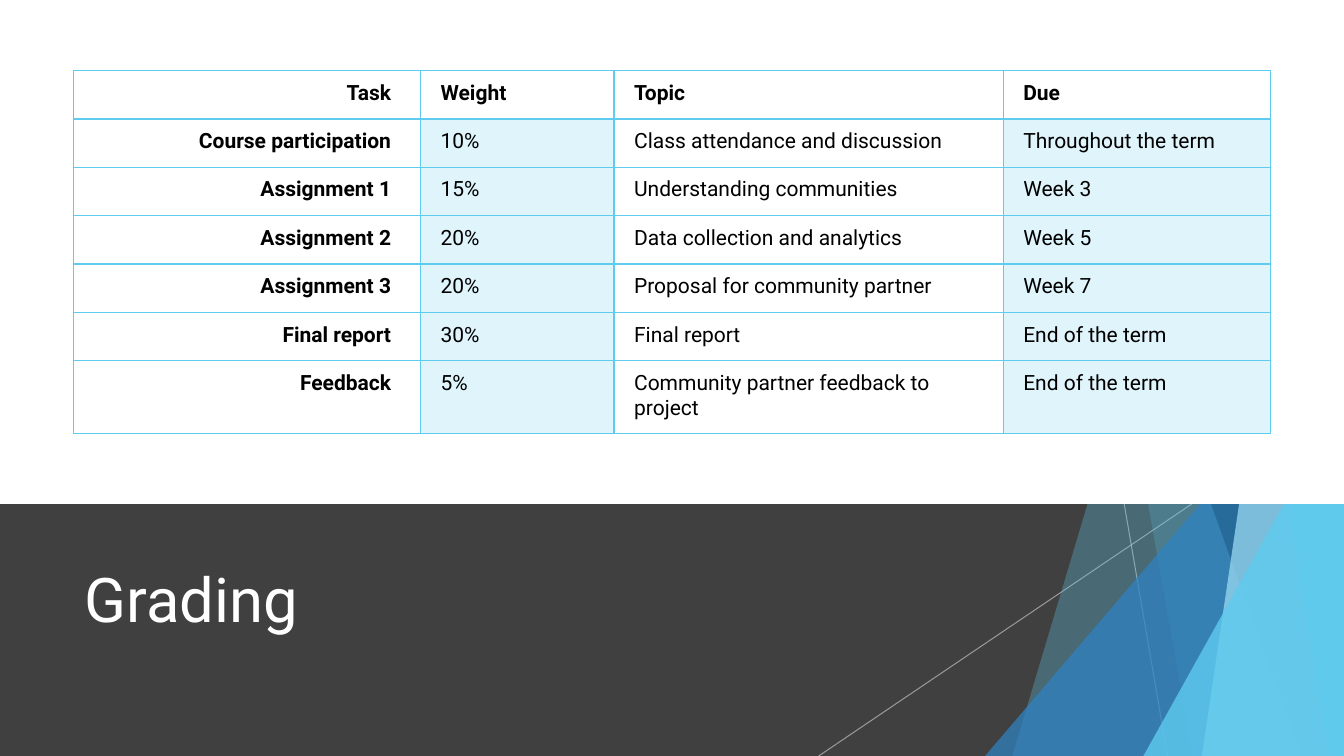
from dataclasses import dataclass

from lxml import etree
from pptx import Presentation
from pptx.dml.color import RGBColor
from pptx.enum.shapes import MSO_CONNECTOR, MSO_SHAPE
from pptx.enum.text import MSO_ANCHOR, PP_ALIGN
from pptx.oxml.ns import qn
from pptx.util import Inches, Pt

RECT = MSO_SHAPE.RECTANGLE
WEDGE = MSO_SHAPE.ISOSCELES_TRIANGLE
LINE = MSO_CONNECTOR.STRAIGHT
MIDDLE = MSO_ANCHOR.MIDDLE
LEFT, RIGHT = PP_ALIGN.LEFT, PP_ALIGN.RIGHT


@dataclass(frozen=True)
class Theme:
    font: str = "Roboto"
    title: float = 44
    body: float = 15
    rule: float = 0.75
    white: str = "FFFFFF"
    black: str = "000000"
    dark: str = "404040"
    gray: str = "BFBFBF"
    sky: str = "5FCBEF"
    pale: str = "9FE0F5"
    blue: str = "2E83C3"
    navy: str = "226292"


@dataclass(frozen=True)
class Facet:
    """Panel running from its slanted left edge to the slide's right edge."""
    top: float
    foot: float
    color: str
    alpha: int


@dataclass(frozen=True)
class Corner:
    """Right triangle standing in the bottom right corner."""
    left: float
    top: float
    color: str
    alpha: int


THEME = Theme()
WIDE, HIGH, SPLIT = 13.33, 7.5, 5
EDGE = -0.01

RAYS = [(11.15, 11.58), (11.82, 8.12)]  # x at the split, x at the foot
FACETS: list[Facet | Corner] = [
    Facet(12.28, 10.04, THEME.sky, 30),
    Facet(10.5, 11.83, THEME.sky, 20),
    Corner(9.77, 3.33, THEME.blue, 72),
    Facet(10.21, 12.91, THEME.navy, 70),
    Facet(13.03, 11.92, THEME.pale, 70),
    Facet(11.96, 13.18, THEME.sky, 65),
    Corner(11.34, 3.93, THEME.sky, 80),
]

COLS = [3.44, 1.92, 3.86, 2.65]
ROWS = [0.48] * 6 + [0.72]
GRADES = [
    ("Task", "Weight", "Topic", "Due"),
    ("Course participation", "10%", "Class attendance and discussion",
     "Throughout the term"),
    ("Assignment 1", "15%", "Understanding communities", "Week 3"),
    ("Assignment 2", "20%", "Data collection and analytics", "Week 5"),
    ("Assignment 3", "20%", "Proposal for community partner", "Week 7"),
    ("Final report", "30%", "Final report", "End of the term"),
    ("Feedback", "5%", "Community partner feedback to project",
     "End of the term"),
]


def paint(fill, color: str, alpha: int = 100) -> None:
    fill.solid()
    fill.fore_color.rgb = RGBColor.from_string(color)
    if alpha < 100:
        tone = fill._xPr.find(qn("a:solidFill"))[0]
        etree.SubElement(tone, qn("a:alpha"), val=str(alpha * 1000))


def finish(shape, color: str, alpha: int = 100) -> None:
    shape.shadow.inherit = False
    paint(shape.fill, color, alpha)
    shape.line.fill.background()


def add_band(shapes, top: float, high: float, color: str) -> None:
    band = shapes.add_shape(RECT, 0, Inches(top), Inches(WIDE), Inches(high))
    finish(band, color)


def add_ray(shapes, start: float, end: float) -> None:
    ray = shapes.add_connector(LINE, Inches(start), Inches(SPLIT),
                               Inches(end), Inches(HIGH))
    ray.line.width = Pt(THEME.rule)
    paint(ray.line.fill, THEME.gray, 70)
    etree.SubElement(ray._element.spPr, qn("a:effectLst"))


def add_facet(shapes, item: Facet | Corner) -> None:
    if isinstance(item, Corner):
        shape = shapes.add_shape(
            WEDGE, Inches(item.left), Inches(item.top),
            Inches(WIDE - item.left), Inches(HIGH - item.top))
        shape.adjustments[0] = 1
    else:
        pen = shapes.build_freeform(Inches(item.top), Inches(EDGE))
        points = [(WIDE, EDGE), (WIDE, HIGH), (item.foot, HIGH)]
        pen.add_line_segments([(Inches(x), Inches(y)) for x, y in points])
        shape = pen.convert_to_shape()
    finish(shape, item.color, item.alpha)


def style(para, size: float, color: str, bold: bool = False) -> None:
    para.font.name = THEME.font
    para.font.size = Pt(size)
    para.font.bold = bold
    para.font.color.rgb = RGBColor.from_string(color)


def add_title(shapes, text: str) -> None:
    box = shapes.add_textbox(Inches(0.74), Inches(5.21),
                             Inches(9.4), Inches(1.44))
    frame = box.text_frame
    frame.word_wrap = True
    frame.vertical_anchor = MIDDLE
    frame.text = text
    style(frame.paragraphs[0], THEME.title, THEME.white)


def add_edges(cell, head: bool) -> None:
    props = cell._tc.get_or_add_tcPr()
    for spot, side in enumerate("LRTB"):
        width = Pt(2 if head and side == "B" else 1)
        edge = etree.Element(qn(f"a:ln{side}"), w=str(width))
        fill = etree.SubElement(edge, qn("a:solidFill"))
        etree.SubElement(fill, qn("a:srgbClr"), val=THEME.sky)
        props.insert(spot, edge)


def fill_cell(cell, text: str, row: int, col: int) -> None:
    cell.text = text
    cell.margin_left = Inches(0.2)
    cell.margin_right = Inches(0.07 if col else 0.29)
    cell.margin_top = cell.margin_bottom = Inches(0.1)
    para = cell.text_frame.paragraphs[0]
    para.alignment = LEFT if col else RIGHT
    style(para, THEME.body, THEME.black, bold=row == 0 or col == 0)
    # Tint every second column below the header
    if row and col % 2:
        paint(cell.fill, THEME.sky, 20)
    else:
        cell.fill.background()
    add_edges(cell, row == 0)


def add_grades(shapes) -> None:
    table = shapes.add_table(len(ROWS), len(COLS), Inches(0.73), Inches(0.7),
                             Inches(sum(COLS)), Inches(sum(ROWS))).table
    table.first_row = table.horz_banding = False
    for col, width in zip(table.columns, COLS):
        col.width = Inches(width)
    for row, high in zip(table.rows, ROWS):
        row.height = Inches(high)
    for r, texts in enumerate(GRADES):
        for c, text in enumerate(texts):
            fill_cell(table.cell(r, c), text, r, c)


def main() -> None:
    deck = Presentation()
    deck.slide_width, deck.slide_height = Inches(WIDE), Inches(HIGH)
    shapes = deck.slides.add_slide(deck.slide_layouts[6]).shapes

    # Dark title band with rays and facets
    add_band(shapes, SPLIT, HIGH - SPLIT, THEME.dark)
    for start, end in RAYS:
        add_ray(shapes, start, end)
    for item in FACETS:
        add_facet(shapes, item)
    add_title(shapes, "Grading")

    # White upper area with the grading table
    add_band(shapes, 0, SPLIT, THEME.white)
    add_grades(shapes)
    deck.save("out.pptx")


if __name__ == "__main__":
    main()
